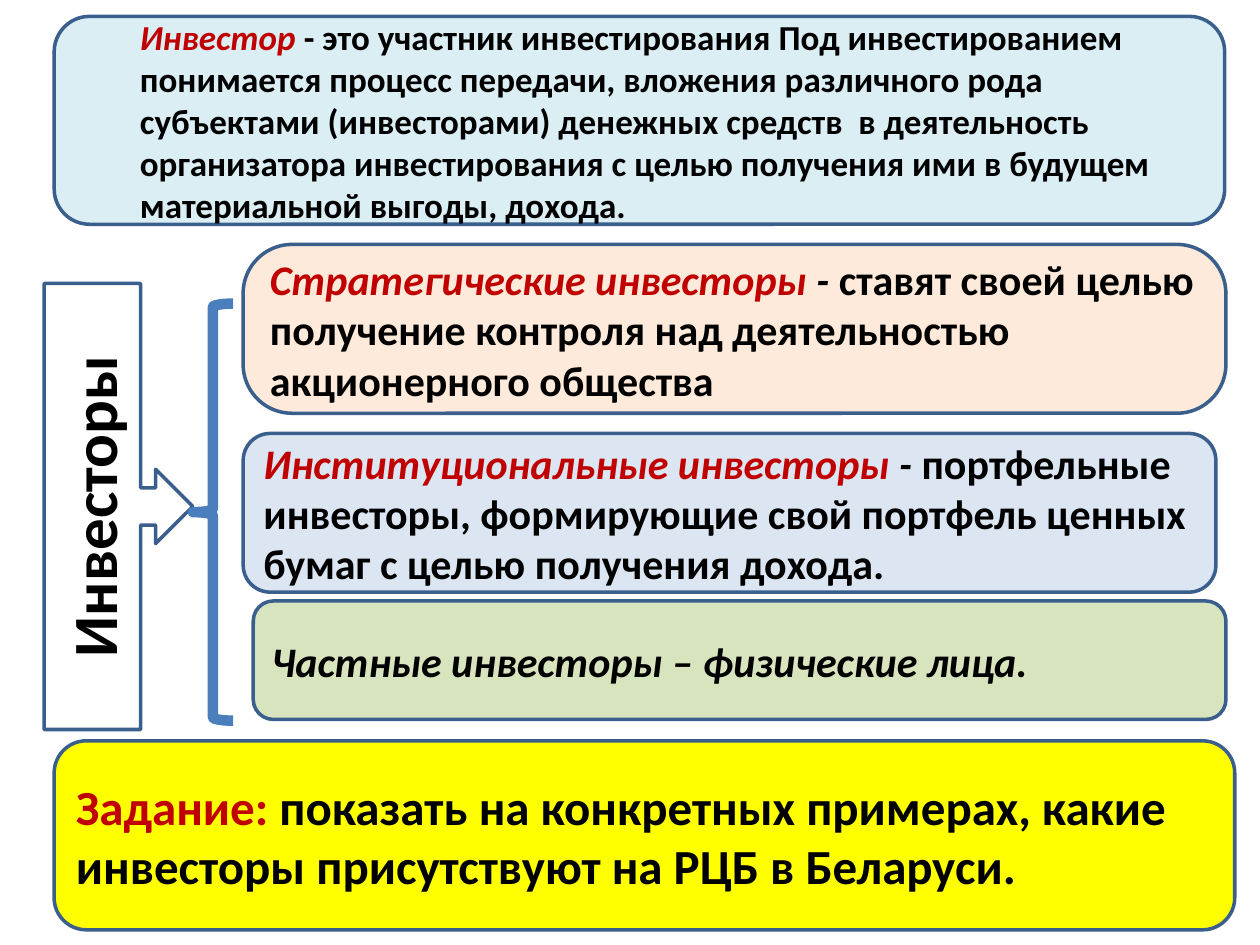
from pptx import Presentation
from pptx.dml.color import RGBColor
from pptx.enum.shapes import MSO_SHAPE
from pptx.enum.text import MSO_ANCHOR, PP_ALIGN
from pptx.util import Inches, Pt

ROUNDED = MSO_SHAPE.ROUNDED_RECTANGLE
CALLOUT = MSO_SHAPE.RIGHT_ARROW_CALLOUT
BRACE = MSO_SHAPE.LEFT_BRACE
MIDDLE = MSO_ANCHOR.MIDDLE
LEFT, CENTER = PP_ALIGN.LEFT, PP_ALIGN.CENTER

CELL = 0.1  # inches: the slide is a grid of 100 columns by 75 rows
COLUMNS, ROWS = 100, 75
BLACK, RED, OUTLINE, BRACE_BLUE = "000000", "C00000", "3A5F8C", "4B7EBC"

# Each run is (text, colour, italic)
DEFINITION = [
    ("Инвестор ", RED, True),
    ("- это участник инвестирования Под инвестированием понимается процесс "
     "передачи, вложения различного рода субъектами (инвесторами) денежных "
     "средств  в деятельность организатора инвестирования с целью получения "
     "ими в будущем материальной выгоды, дохода.", BLACK, False),
]
# Each card is (left, top, width, height in grid cells of its region, fill, corner, runs)
INVESTOR_CARDS = [
    (15.8, 0, 78, 13.4, "FDEADA", 0.29, [
        ("Стратегические инвесторы ", RED, True),
        ("-", BLACK, True),
        (" ставят своей целью получение контроля над деятельностью "
         "акционерного общества", BLACK, False)]),
    (15.8, 15, 77.2, 12.6, "DCE6F2", 0.17, [
        ("Институциональные инвесторы ", RED, True),
        ("-", BLACK, True),
        (" портфельные инвесторы, формирующие свой портфель ценных бумаг "
         "с целью получения дохода.", BLACK, False)]),
    (16.6, 28.3, 77.2, 9.4, "D7E4BD", 0.17, [
        ("Частные инвесторы – физические лица.", BLACK, True)]),
]
TASK = [
    ("Задание:", RED, False),
    (" показать на конкретных примерах, какие инвесторы присутствуют "
     "на РЦБ в Беларуси.", BLACK, False),
]


def cells(count):
    return Inches(count * CELL)


def color(hex_string):
    return RGBColor.from_string(hex_string)


def add_outlined(slide, kind, box, fill=None, line=OUTLINE, weight=2):
    shape = slide.shapes.add_shape(kind, *map(cells, box))
    shape.shadow.inherit = False
    if fill:
        shape.fill.solid()
        shape.fill.fore_color.rgb = color(fill)
    else:
        shape.fill.background()
    shape.line.color.rgb = color(line)
    shape.line.width = Pt(weight)
    return shape


def write(shape, runs, size, alignment=LEFT):
    frame = shape.text_frame
    frame.word_wrap = True
    frame.vertical_anchor = MIDDLE
    paragraph = frame.paragraphs[0]
    paragraph.alignment = alignment
    paragraph.font.name = "Calibri"
    paragraph.font.size = Pt(size)
    paragraph.font.bold = True
    for text, run_color, italic in runs:
        run = paragraph.add_run()
        run.text = text
        run.font.color.rgb = color(run_color)
        run.font.italic = italic
    return paragraph


def add_card(slide, box, fill, runs, size, corner=0.17):
    card = add_outlined(slide, ROUNDED, box, fill)
    card.adjustments[0] = corner
    return write(card, runs, size)


def add_definition(slide, box):
    paragraph = add_card(slide, box, "DBEEF4", DEFINITION, 20)
    paragraph.space_after = Pt(6)
    properties = paragraph._p.get_or_add_pPr()
    properties.set("marL", str(Inches(0.5)))
    properties.set("indent", "0")


def add_classification(slide, box):
    """Vertical heading, brace and the cards of the investor types."""
    left, top, _, height = box
    heading = add_outlined(slide, CALLOUT, (left, top + 3.1, 11.8, 35.4), "FFFFFF")
    write(heading, [("Инвесторы", BLACK, False)], 36, CENTER)
    heading.text_frame._txBody.bodyPr.set("vert", "vert270")
    for x, y, card_width, card_height, fill, corner, runs in INVESTOR_CARDS:
        card_box = (left + x, top + y, card_width, card_height)
        add_card(slide, card_box, fill, runs, 24, corner)
    brace_box = (left + 11.8, top + 4.7, 3.2, height - 5.4)
    add_outlined(slide, BRACE, brace_box, line=BRACE_BLUE, weight=6)


def add_task(slide, box):
    add_card(slide, box, "FFFF00", TASK, 28)


def main():
    presentation = Presentation()
    presentation.slide_width = cells(COLUMNS)
    presentation.slide_height = cells(ROWS)
    slide = presentation.slides.add_slide(presentation.slide_layouts[6])
    add_definition(slide, (4.3, 1.3, 92.9, 16.5))
    add_classification(slide, (3.5, 19.4, 93.8, 38.5))
    add_task(slide, (4.3, 58.8, 93.7, 15))
    presentation.save("out.pptx")


if __name__ == "__main__":
    main()
